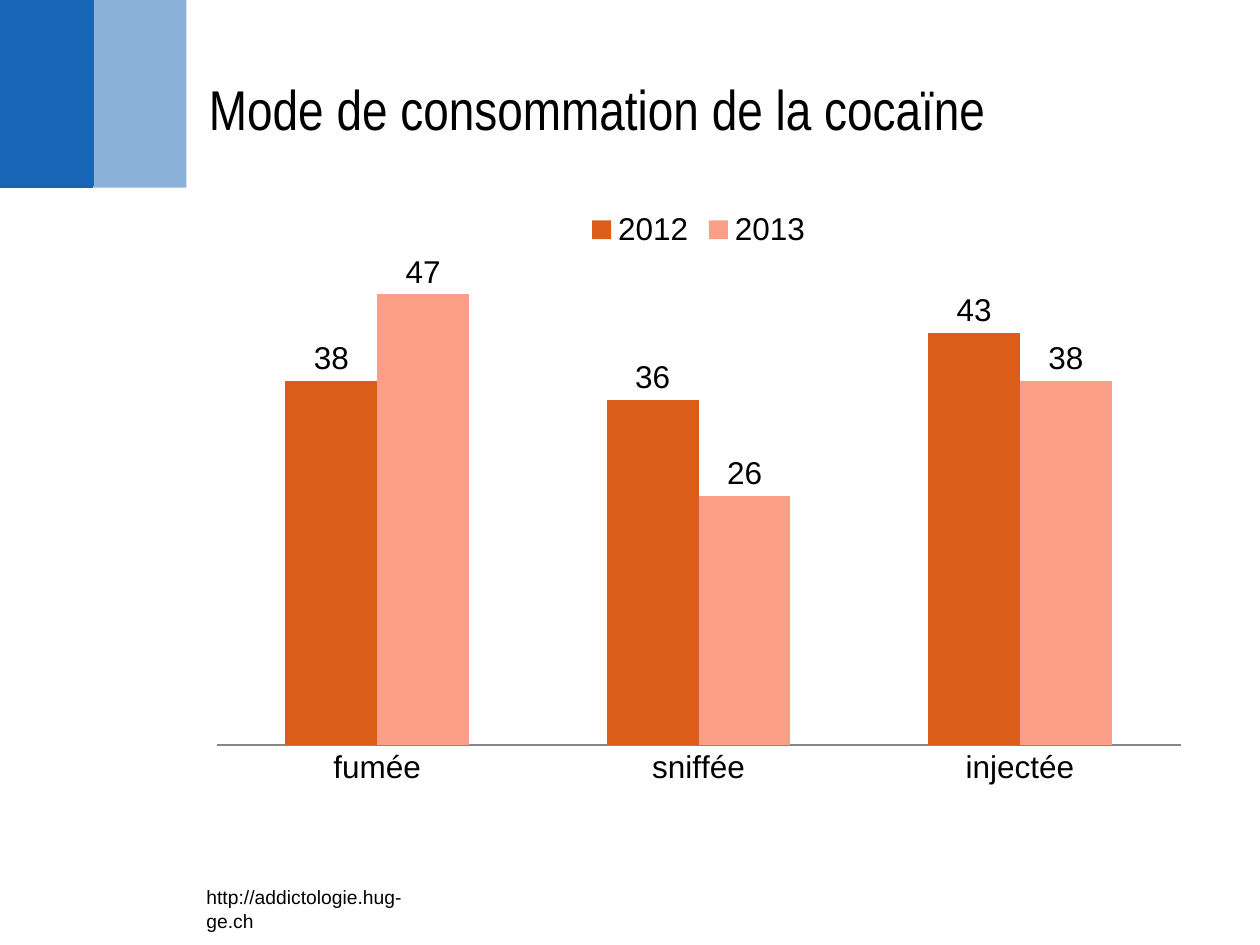
from lxml import etree
from pptx import Presentation
from pptx.chart.data import CategoryChartData
from pptx.dml.color import RGBColor
from pptx.enum.chart import XL_CHART_TYPE as CT, XL_LABEL_POSITION as LP
from pptx.enum.chart import XL_LEGEND_POSITION as LEG, XL_TICK_MARK as TM
from pptx.enum.shapes import MSO_CONNECTOR
from pptx.oxml.ns import qn
from pptx.util import Inches, Pt

BLUE = "1864B5"
SERIES = {
    "2012": ((38, 36, 43), "DD5E18"),
    "2013": ((47, 26, 38), "FB9F88"),
}


def rgb(hex_color):
    return RGBColor.from_string(hex_color)


def style_font(font, size, name="Arial", color="000000"):
    font.size, font.name = Pt(size), name
    font.color.rgb = rgb(color)


class Deck:
    def __init__(self):
        self.prs = Presentation()
        self.prs.slide_width, self.prs.slide_height = Inches(10), Inches(7.5)
        self.s = self.prs.slides.add_slide(self.prs.slide_layouts[6])

    def line(self, x1, y1, x2, y2, color, width=1):
        c = self.s.shapes.add_connector(
            MSO_CONNECTOR.STRAIGHT, *map(Inches, (x1, y1, x2, y2)))
        c.line.color.rgb = rgb(color)
        c.line.width = Pt(width)
        etree.SubElement(c._element.spPr, qn("a:effectLst"))

    def block(self, x, y, w, h, color, alpha=100):
        fb = self.s.shapes.build_freeform(Inches(x), Inches(y))
        corners = [(x + w, y), (x + w, y + h), (x, y + h)]
        fb.add_line_segments([(Inches(a), Inches(b)) for a, b in corners])
        sp = fb.convert_to_shape()
        sp.shadow.inherit = False
        sp.line.fill.background()
        sp.fill.solid()
        sp.fill.fore_color.rgb = rgb(color)
        if alpha < 100:
            clr = sp._element.spPr.find(qn("a:solidFill"))[0]
            etree.SubElement(clr, qn("a:alpha"), val=str(alpha * 1000))

    def text(self, text, x, y, w, h, **fmt):
        tf = self.s.shapes.add_textbox(*map(Inches, (x, y, w, h))).text_frame
        tf.word_wrap = True
        r = tf.paragraphs[0].add_run()
        r.text = text
        style_font(r.font, **fmt)

    def column_chart(self, cats, series, x, y, w, h, size=18):
        data = CategoryChartData()
        data.categories = cats
        for name, (values, _) in series.items():
            data.add_series(name, values)
        chart = self.s.shapes.add_chart(
            CT.COLUMN_CLUSTERED, *map(Inches, (x, y, w, h)), data).chart
        style_font(chart.font, size)
        chart.has_title = False
        chart.has_legend = True
        chart.legend.position = LEG.TOP
        chart.legend.include_in_layout = False

        axis = chart.value_axis
        axis.visible = axis.has_major_gridlines = False
        axis.minimum_scale, axis.maximum_scale = 0, 50
        axis = chart.category_axis
        axis.major_tick_mark = axis.minor_tick_mark = TM.NONE
        axis.format.line.color.rgb = rgb("868686")

        plot = chart.plots[0]
        plot.gap_width, plot.overlap = 150, 0
        plot.vary_by_categories = False
        for ser, (_, color) in zip(plot.series, series.values()):
            ser.format.fill.solid()
            ser.format.fill.fore_color.rgb = rgb(color)
            labels = ser.data_labels
            labels.show_value = True
            labels.position = LP.OUTSIDE_END
            style_font(labels.font, size)


def main():
    d = Deck()
    d.line(0.74, 0, 0.74, 1.48, "0C72C0")
    d.text("http://addictologie.hug-ge.ch", 1.54, 6.98, 2.08, 0.29, size=11)
    for i, alpha in enumerate((100, 50)):
        d.block(0.74 * i, -0.01, 0.74, 1.5, BLUE, alpha)
    d.text("Mode de consommation de la cocaïne", 1.56, 0.54, 7.77, 0.64,
           size=32, name="Arial Narrow")
    d.column_chart(("fumée", "sniffée", "injectée"), SERIES,
                   1.56, 1.56, 7.97, 4.77)
    d.prs.save("out.pptx")


if __name__ == "__main__":
    main()
